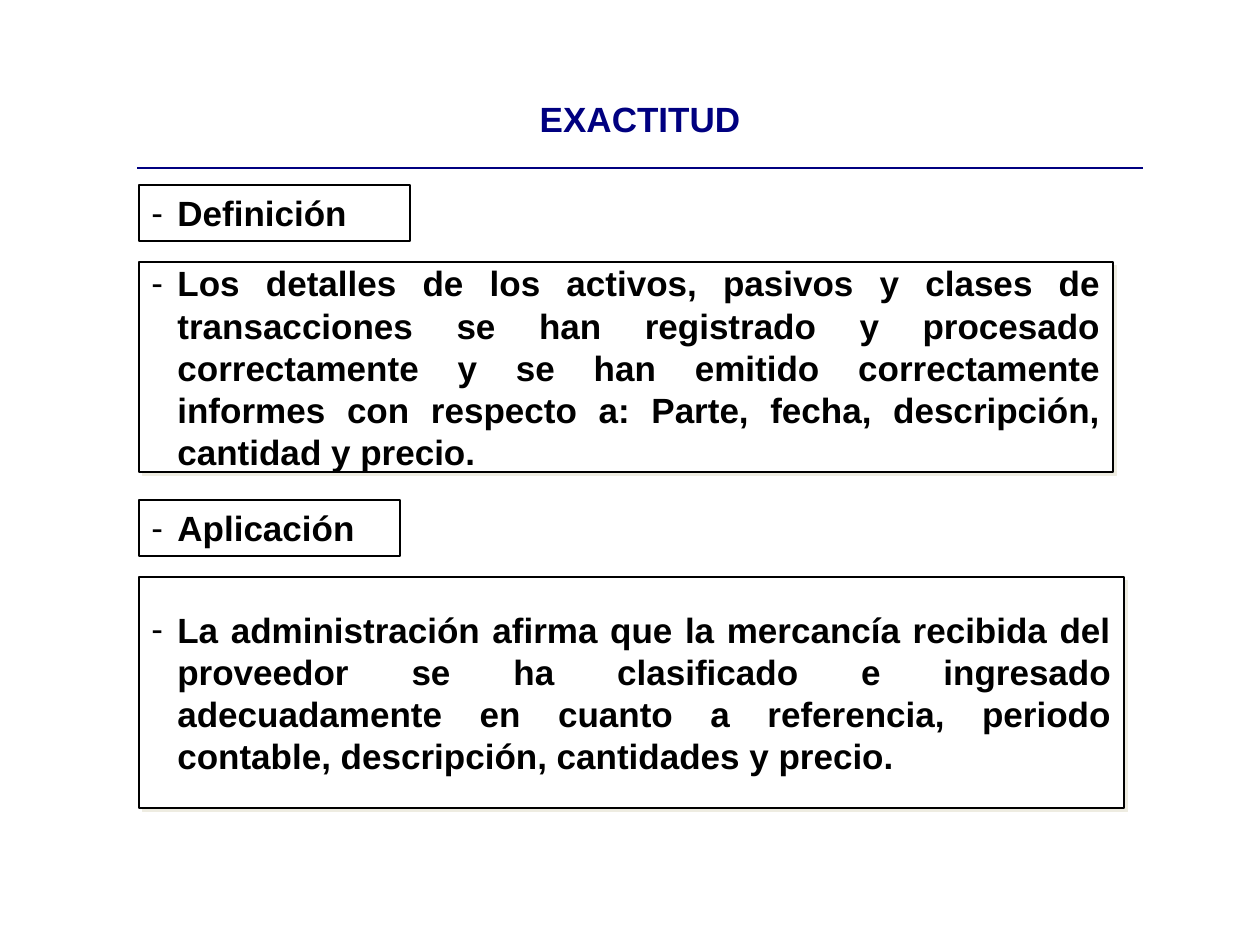
from lxml import etree
from pptx import Presentation
from pptx.dml.color import RGBColor
from pptx.enum.shapes import MSO_SHAPE
from pptx.enum.text import MSO_ANCHOR, PP_ALIGN
from pptx.oxml import parse_xml
from pptx.oxml.ns import nsdecls, qn
from pptx.util import Pt

RECTANGLE = MSO_SHAPE.RECTANGLE
MIDDLE = MSO_ANCHOR.MIDDLE
LEFT, CENTER, JUSTIFY = PP_ALIGN.LEFT, PP_ALIGN.CENTER, PP_ALIGN.JUSTIFY

# Content: heading, heading width, body, body top, body width, body height (px)
TITLE = "EXACTITUD"
SECTIONS = [
    ("Definición", 271,
     "Los detalles de los activos, pasivos y clases de transacciones se han "
     "registrado y procesado correctamente y se han emitido correctamente "
     "informes con respecto a: Parte, fecha, descripción, cantidad y precio.",
     262, 974, 210),
    ("Aplicación", 261,
     "La administración afirma que la mercancía recibida del proveedor se ha "
     "clasificado e ingresado adecuadamente en cuanto a referencia, periodo "
     "contable, descripción, cantidades y precio.",
     577, 985, 231),
]

# Layout in px, 126 to the inch
SCALE = 914400 / 126
SLIDE_WIDTH, SLIDE_HEIGHT = 1260, 945
TITLE_BOX = (136, 95, 1008, 73)
BOX_LEFT = 139
HEADING_HEIGHT = 56
HEADING_RISE = 77  # from heading top to body top
INDENT = 26


class Theme:
    font = "Arial"
    size = Pt(20)
    line = Pt(0.75)
    title = RGBColor(0x00, 0x00, 0x80)
    ink = RGBColor(0x00, 0x00, 0x00)
    paper = RGBColor(0xFF, 0xFF, 0xFF)
    shadow = "EEECE1"


def px(value):
    return round(value * SCALE)


def write(text_frame, text, color, alignment):
    text_frame.text = text
    paragraph = text_frame.paragraphs[0]
    paragraph.alignment = alignment
    font = paragraph.runs[0].font
    font.name, font.size, font.bold = Theme.font, Theme.size, True
    font.color.rgb = color
    return paragraph


def add_dash(paragraph):
    properties = paragraph._p.get_or_add_pPr()
    properties.set("marL", str(px(INDENT)))
    properties.set("indent", str(-px(INDENT)))
    etree.SubElement(properties, qn("a:buFont"), typeface=Theme.font)
    etree.SubElement(properties, qn("a:buChar"), char="-")


def add_shadow(shape):
    effects = shape._element.spPr.find(qn("a:effectLst"))
    effects.append(parse_xml(
        f'<a:outerShdw {nsdecls("a")} dist="{Pt(2.8)}" dir="2700000" algn="ctr" '
        f'rotWithShape="0"><a:srgbClr val="{Theme.shadow}"/></a:outerShdw>'))


def add_box(slide, top, width, height, text, alignment, raised):
    shape = slide.shapes.add_shape(
        RECTANGLE, px(BOX_LEFT), px(top), px(width), px(height))
    shape.shadow.inherit = False
    shape.line.color.rgb = Theme.ink
    shape.line.width = Theme.line
    if raised:
        shape.fill.solid()
        shape.fill.fore_color.rgb = Theme.paper
        add_shadow(shape)
    else:
        shape.fill.background()
    shape.text_frame.word_wrap = True
    shape.text_frame.vertical_anchor = MIDDLE
    add_dash(write(shape.text_frame, text, Theme.ink, alignment))


def add_title(slide):
    table = slide.shapes.add_table(1, 1, *map(px, TITLE_BOX)).table
    table.first_row = table.horz_banding = False
    cell = table.cell(0, 0)
    cell.fill.background()
    write(cell.text_frame, TITLE, Theme.title, CENTER)
    # Rule under the title
    cell._tc.get_or_add_tcPr().insert(0, parse_xml(
        f'<a:lnB {nsdecls("a")} w="{Pt(1)}"><a:solidFill>'
        f'<a:srgbClr val="{Theme.title}"/></a:solidFill></a:lnB>'))


def main():
    presentation = Presentation()
    presentation.slide_width = px(SLIDE_WIDTH)
    presentation.slide_height = px(SLIDE_HEIGHT)
    slide = presentation.slides.add_slide(presentation.slide_layouts[6])

    add_title(slide)
    for heading, heading_width, body, top, width, height in SECTIONS:
        add_box(slide, top - HEADING_RISE, heading_width, HEADING_HEIGHT,
                heading, LEFT, raised=False)
        add_box(slide, top, width, height, body, JUSTIFY, raised=True)

    presentation.save("out.pptx")


if __name__ == "__main__":
    main()
